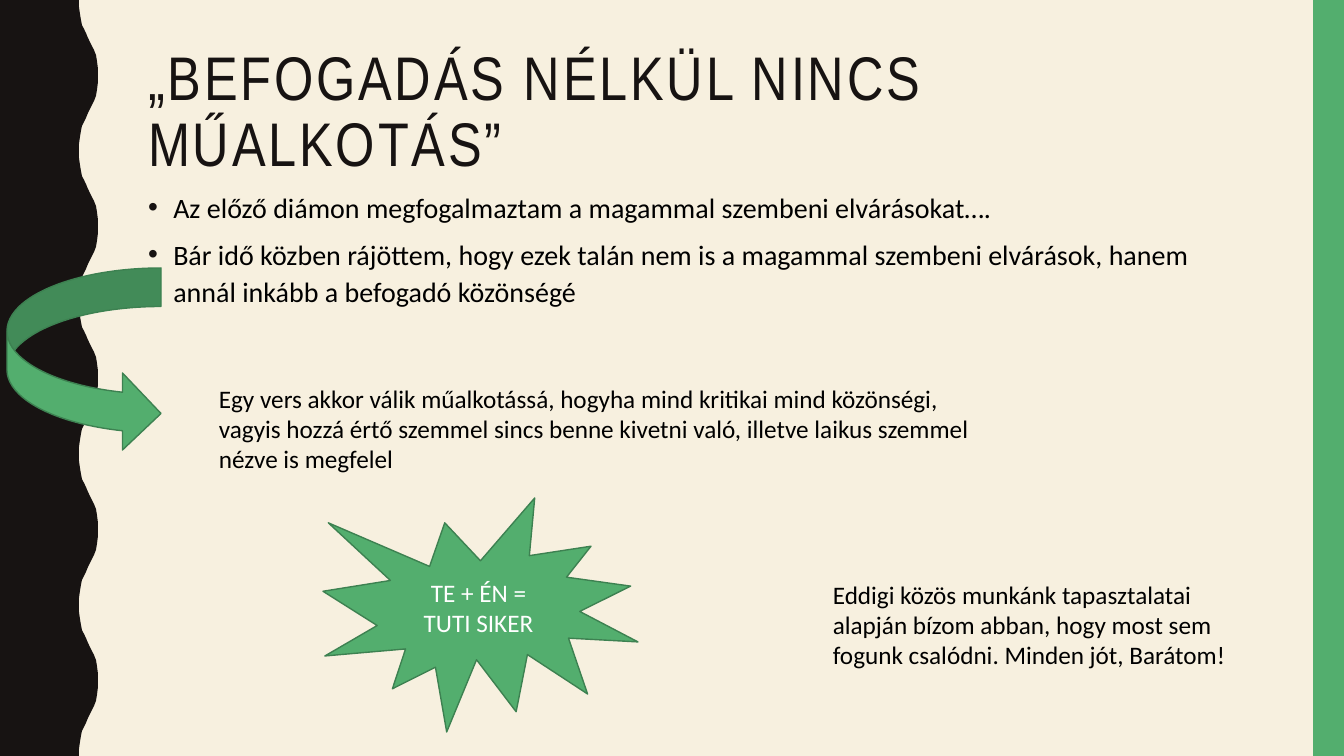
from lxml import etree
from pptx import Presentation
from pptx import util as u
from pptx.dml.color import RGBColor
from pptx.enum import shapes, text
from pptx.oxml.ns import qn

PX = 914400 / 100.8
WIDTH, HEIGHT = 1344, 756
COLORS = {
    "cream": "F7F0DF",
    "ink": "171312",
    "green": "53AE6E",
    "edge": "3D8151",
    "black": "000000",
    "white": "FFFFFF",
}
# Edge of the dark band over half a wave, from trough to crest
WAVES = 5
HALF_WAVE = [(79, 0), (79, 7), (80, 14), (81, 20), (82, 25), (84, 29), (86, 33),
             (88, 38), (90, 42), (92, 46), (94, 50), (96, 55), (97, 61), (98, 69)]


def px(n):
    return u.Emu(round(n * PX))


def color(name):
    return RGBColor.from_string(COLORS[name])


def place(sp, left, top, width, height):
    sp.left, sp.top, sp.width, sp.height = map(px, (left, top, width, height))


def paint(sp, fill, line=None):
    sp.shadow.inherit = False
    sp.fill.solid()
    sp.fill.fore_color.rgb = color(fill)
    if line:
        sp.line.color.rgb = color(line)
        sp.line.width = u.Pt(1)
    else:
        sp.line.fill.background()


def write(tf, lines, size, fill, font="Calibri", align=text.PP_ALIGN.LEFT):
    """Fill the frame with one paragraph per line and return the paragraphs."""
    tf.word_wrap = True
    for i, line in enumerate(lines):
        p = tf.paragraphs[0] if i == 0 else tf.add_paragraph()
        p.alignment = align
        r = p.add_run()
        r.text = line
        r.font.name = font
        r.font.size = u.Pt(size)
        r.font.color.rgb = color(fill)
    return tf.paragraphs


def add_bullet(p):
    pPr = p._p.get_or_add_pPr()
    indent = u.Inches(0.25)
    pPr.set("marL", str(indent))
    pPr.set("indent", str(-indent))
    bu_clr = etree.SubElement(pPr, qn("a:buClr"))
    etree.SubElement(bu_clr, qn("a:srgbClr"), val=COLORS["ink"])
    etree.SubElement(pPr, qn("a:buFont"), typeface="Arial")
    etree.SubElement(pPr, qn("a:buChar"), char="•")


def add_wavy_band(s):
    wave = HEIGHT / WAVES
    edge = []
    for i in range(WAVES):
        edge += [(x, i * wave + y) for x, y in HALF_WAVE]
        edge.append((98, (i + 0.5) * wave))
        edge += [(x, (i + 1) * wave - y) for x, y in reversed(HALF_WAVE)]
    builder = s.shapes.build_freeform(0, 0, scale=PX)
    builder.add_line_segments(edge + [(0, HEIGHT)], close=True)
    paint(builder.convert_to_shape(), "ink")


def add_shape(s, kind, box, line=None):
    sp = s.shapes.add_shape(kind, *map(px, box))
    paint(sp, "green", line)
    return sp


def add_title(s, line):
    sp = s.shapes.title
    place(sp, 138, 42, 1122, 111)
    tf = sp.text_frame
    tf.auto_size = text.MSO_AUTO_SIZE.NONE
    tf.vertical_anchor = text.MSO_ANCHOR.TOP
    p = write(tf, [line], 44, "ink", "Arial Narrow")[0]
    p.line_spacing = 0.9
    p.runs[0].font._element.set("spc", "200")


def add_bullets(s, lines):
    sp = s.placeholders[1]
    place(sp, 138, 182, 1122, 466)
    tf = sp.text_frame
    tf.auto_size = text.MSO_AUTO_SIZE.NONE
    tf.vertical_anchor = text.MSO_ANCHOR.TOP
    for p in write(tf, lines, 20, "black"):
        p.line_spacing = 1.1
        p.space_before = u.Pt(7)
        add_bullet(p)


def add_note(s, box, line):
    sp = s.shapes.add_textbox(*map(px, box))
    write(sp.text_frame, [line], 18, "black")


def add_burst(s, box, lines):
    sp = add_shape(s, shapes.MSO_SHAPE.EXPLOSION1, box, "edge")
    sp.text_frame.vertical_anchor = text.MSO_ANCHOR.MIDDLE
    write(sp.text_frame, lines, 18, "white", align=text.PP_ALIGN.CENTER)


def main():
    prs = Presentation()
    prs.slide_width, prs.slide_height = px(WIDTH), px(HEIGHT)
    s = prs.slides.add_slide(prs.slide_layouts[1])
    s.background.fill.solid()
    s.background.fill.fore_color.rgb = color("cream")

    add_wavy_band(s)
    add_shape(s, shapes.MSO_SHAPE.RECTANGLE, (1313, 0, 31, HEIGHT))
    add_title(s, "„BEFOGADÁS NÉLKÜL NINCS MŰALKOTÁS”")
    add_bullets(s, [
        "Az előző diámon megfogalmaztam a magammal szembeni elvárásokat….",
        "Bár idő közben rájöttem, hogy ezek talán nem is a magammal szembeni "
        "elvárások, hanem annál inkább a befogadó közönségé",
    ])
    add_shape(s, shapes.MSO_SHAPE.CURVED_RIGHT_ARROW, (7, 268, 154, 184), "edge")
    add_note(s, (209, 378, 773, 102),
             "Egy vers akkor válik műalkotássá, hogyha mind kritikai mind közönségi, "
             "vagyis hozzá értő szemmel sincs benne kivetni való, illetve laikus "
             "szemmel nézve is megfelel")
    add_burst(s, (323, 498, 315, 234), ["TE + ÉN =", "TUTI SIKER"])
    add_note(s, (823, 574, 437, 132),
             "Eddigi közös munkánk tapasztalatai alapján bízom abban, hogy most sem "
             "fogunk csalódni. Minden jót, Barátom!")
    prs.save("out.pptx")


if __name__ == "__main__":
    main()
